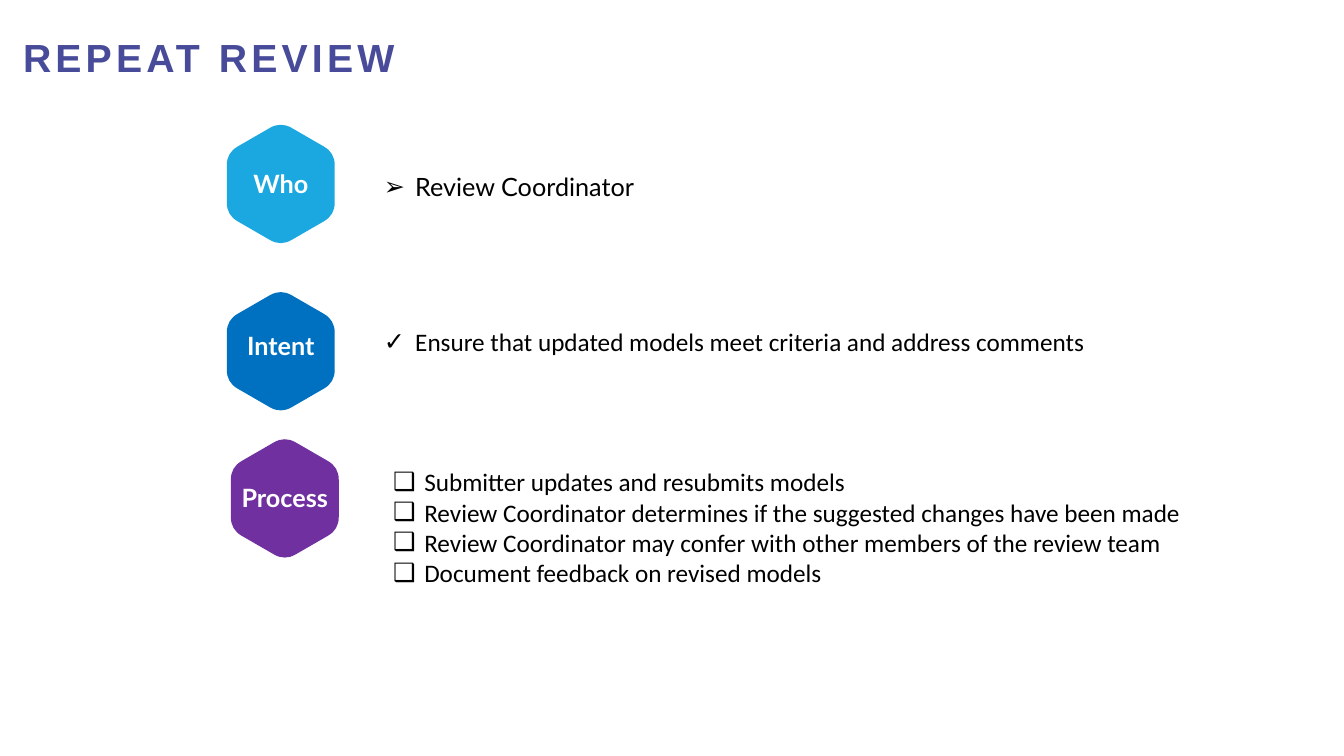
from math import cos, pi, sin

from lxml import etree
from pptx import Presentation
from pptx.dml.color import RGBColor
from pptx.enum.text import MSO_ANCHOR, PP_ALIGN
from pptx.oxml.ns import qn
from pptx.util import Inches, Pt

LEFT, CENTER = PP_ALIGN.LEFT, PP_ALIGN.CENTER
TOP, MIDDLE = MSO_ANCHOR.TOP, MSO_ANCHOR.MIDDLE

BLACK = RGBColor(0x00, 0x00, 0x00)
WHITE = RGBColor(0xFF, 0xFF, 0xFF)
INDIGO = RGBColor(0x48, 0x4B, 0x99)
SKY = RGBColor(0x1B, 0xA8, 0xE0)
BLUE = RGBColor(0x00, 0x70, 0xC0)
PURPLE = RGBColor(0x70, 0x30, 0xA0)

BADGE_WIDTH, BADGE_HEIGHT = 1.07, 1.19
LABEL_WIDTH, LABEL_HEIGHT = 1.3, 0.4
CORNER_CUT = 0.2  # share of each side taken by a rounded corner
INDENT = 0.31


def write_text(frame, lines, font="Calibri", size=18, color=BLACK, bold=False,
               align=LEFT, anchor=TOP, bullet=None, spacing=None, line_spacing=None):
    frame.word_wrap = True
    frame.vertical_anchor = anchor
    for index, line in enumerate(lines):
        paragraph = frame.paragraphs[0] if index == 0 else frame.add_paragraph()
        paragraph.alignment = align
        if line_spacing:
            paragraph.line_spacing = line_spacing
        if bullet:
            properties = paragraph._p.get_or_add_pPr()
            properties.set("marL", str(Inches(INDENT)))
            properties.set("indent", str(-Inches(INDENT)))
            etree.SubElement(properties, qn("a:buFont")).set("typeface", "Arial")
            etree.SubElement(properties, qn("a:buChar")).set("char", bullet)
        run = paragraph.add_run()
        run.text = line
        run.font.name = font
        run.font.size = Pt(size)
        run.font.bold = bold
        run.font.color.rgb = color
        if spacing:
            run._r.get_or_add_rPr().set("spc", str(spacing * 100))


def hexagon_points(center_x, center_y):
    """Four curve points for each corner of a pointed-top hexagon."""
    radius = BADGE_WIDTH / 2 / cos(pi / 6)
    corners = [(center_x + radius * sin(k * pi / 3), center_y - radius * cos(k * pi / 3))
               for k in range(6)]
    points = []
    for k, corner in enumerate(corners):
        before, after = corners[k - 1], corners[(k + 1) % 6]
        for neighbor, cut in ((before, CORNER_CUT), (before, CORNER_CUT / 3),
                              (after, CORNER_CUT / 3), (after, CORNER_CUT)):
            points.append(tuple(Inches(c + cut * (n - c)) for c, n in zip(corner, neighbor)))
    return points


def round_corners(shape):
    """Merge the last three points of each corner into one Bezier curve."""
    segments = list(shape._element.iter(qn("a:moveTo"), qn("a:lnTo")))
    for first in range(0, len(segments) - 3, 4):
        control, second_control, end = segments[first + 1:first + 4]
        control.tag = qn("a:cubicBezTo")
        for segment in (second_control, end):
            control.append(segment[0])
            segment.getparent().remove(segment)


class ReviewSlide:
    def __init__(self, presentation):
        self.slide = presentation.slides.add_slide(presentation.slide_layouts[6])

    def text(self, lines, left, top, width, height, shapes=None, **style):
        box = (shapes or self.slide.shapes).add_textbox(
            Inches(left), Inches(top), Inches(width), Inches(height))
        write_text(box.text_frame, lines, **style)

    def badge(self, label, color, left, top, label_top):
        group = self.slide.shapes.add_group_shape()
        center_x = left + BADGE_WIDTH / 2
        outline = hexagon_points(center_x, top + BADGE_HEIGHT / 2)
        builder = group.shapes.build_freeform(*outline[0])
        builder.add_line_segments(outline[1:], close=True)
        hexagon = builder.convert_to_shape()
        round_corners(hexagon)
        hexagon.shadow.inherit = False
        hexagon.fill.solid()
        hexagon.fill.fore_color.rgb = color
        hexagon.line.fill.background()
        self.text([label], center_x - LABEL_WIDTH / 2, label_top, LABEL_WIDTH, LABEL_HEIGHT,
                  shapes=group.shapes, font="Lato", color=WHITE, bold=True, align=CENTER)


def main():
    presentation = Presentation()
    presentation.slide_width = Inches(13.33)
    presentation.slide_height = Inches(7.5)
    review = ReviewSlide(presentation)

    # Process
    review.text(["Submitter updates and resubmits models",
                 "Review Coordinator determines if the suggested changes have been made",
                 "Review Coordinator may confer with other members of the review team",
                 "Document feedback on revised models"],
                3.8, 4.58, 8.37, 1.31, bullet="❑")
    review.badge("Process", PURPLE, 2.29, 4.35, 4.74)

    # Intent
    review.text(["Ensure that updated models meet criteria and address comments"],
                3.71, 3.19, 7.59, 0.4, bullet="✓")
    review.badge("Intent", BLUE, 2.25, 2.89, 3.23)

    # Who
    review.text(["Review Coordinator"], 3.71, 1.65, 5.62, 0.4, font="Lato", bullet="➢")
    review.badge("Who", SKY, 2.25, 1.23, 1.62)

    # Title
    review.text(["REPEAT REVIEW"], 0.13, 0.15, 12.29, 0.88, font="Arial", size=28,
                color=INDIGO, bold=True, anchor=MIDDLE, spacing=3, line_spacing=0.9)

    presentation.save("out.pptx")


if __name__ == "__main__":
    main()
